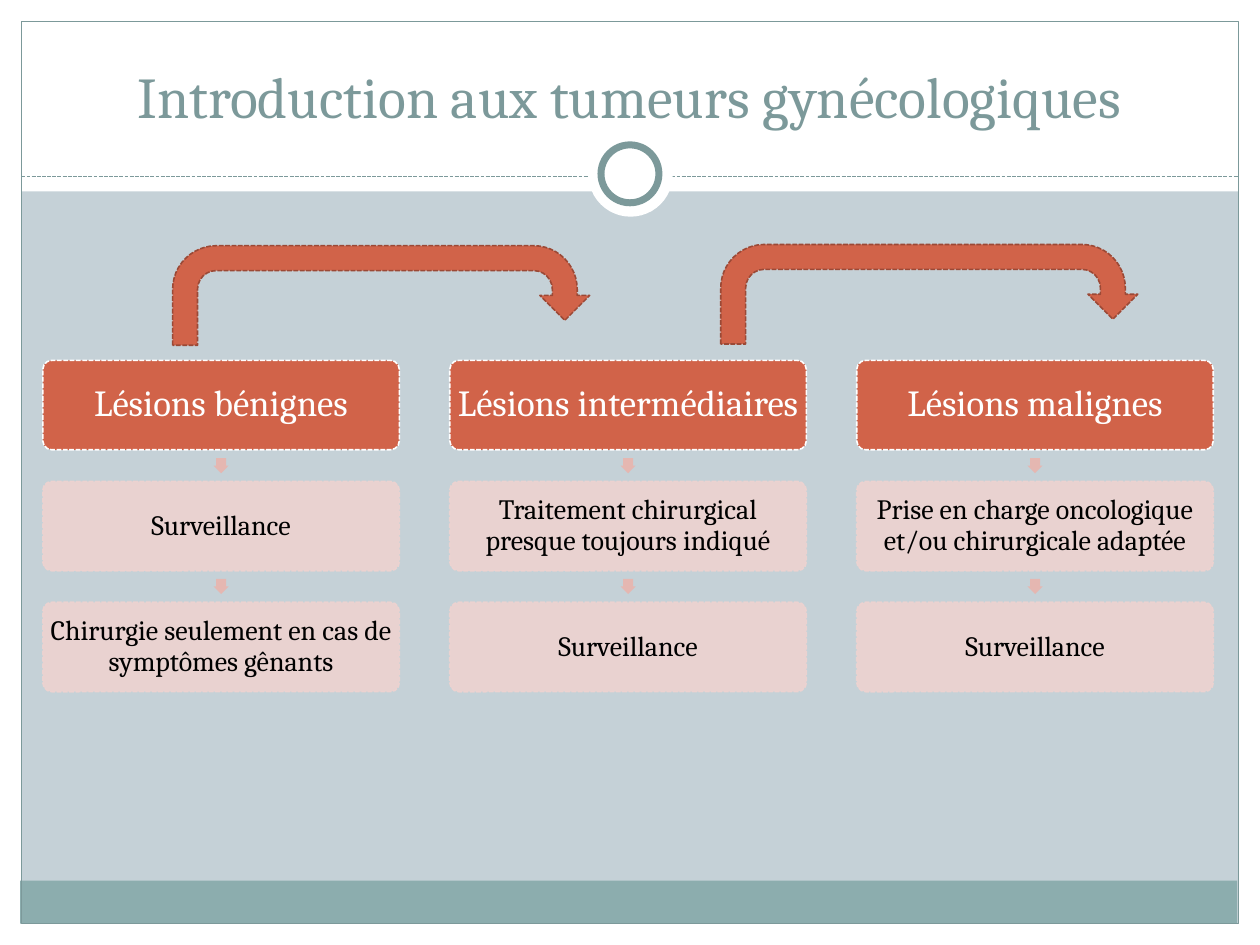
import pptx
import pptx.util
import pptx.dml.color
import pptx.enum.dml
import pptx.enum.shapes
import pptx.enum.text
import pptx.oxml.ns
import lxml.etree

Inches, Pt = pptx.util.Inches, pptx.util.Pt
Kind = pptx.enum.shapes.MSO_SHAPE
Anchor = pptx.enum.text.MSO_ANCHOR
qn = pptx.oxml.ns.qn

COLORS = {
    "back": "C5D1D7", "white": "FFFFFF", "black": "000000",
    "teal": "7C999A", "foot": "8CADAE", "head": "D16349",
    "edge": "9B4936", "step": "EED3D0", "link": "E5B7B1",
}


def color(name):
    return pptx.dml.color.RGBColor.from_string(COLORS[name])


class Deck:
    """Holds the style and the current slide."""
    font = "Cambria"
    dash = pptx.enum.dml.MSO_LINE.SQUARE_DOT

    def __init__(self, slide):
        self.slide = slide
        fill = slide.background.fill
        fill.solid()
        fill.fore_color.rgb = color("back")

    def stroke(self, line, name, width, dashed):
        line.color.rgb = color(name)
        line.width = Pt(width)
        if dashed:
            line.dash_style = self.dash

    def shape(self, kind, box, fill=None, line=None, width=0.9,
              dashed=False, adjust=(), alpha=None):
        item = self.slide.shapes.add_shape(kind, *map(Inches, box))
        item.shadow.inherit = False
        for spot, value in enumerate(adjust):
            item.adjustments[spot] = value
        if fill:
            item.fill.solid()
            item.fill.fore_color.rgb = color(fill)
        else:
            item.fill.background()
        if line:
            self.stroke(item.line, line, width, dashed)
        else:
            item.line.fill.background()
        if alpha:
            for tint in item.element.spPr.iter(qn("a:srgbClr")):
                lxml.etree.SubElement(tint, qn("a:alpha"), val=str(alpha * 1000))
        return item

    def rule(self, left, right, top, name):
        link = self.slide.shapes.add_connector(
            pptx.enum.shapes.MSO_CONNECTOR.STRAIGHT,
            *map(Inches, (left, top, right, top)))
        self.stroke(link.line, name, 0.75, True)
        lxml.etree.SubElement(link.element.spPr, qn("a:effectLst"))

    def label(self, item, text, size, name, inset, anchor=Anchor.MIDDLE, space=0.9):
        frame = item.text_frame
        sides = ("left", "right", "top", "bottom")
        form = {f"margin_{side}": Inches(inset) for side in sides}
        form.update(word_wrap=True, vertical_anchor=anchor)
        for key, value in form.items():
            setattr(frame, key, value)
        par = frame.paragraphs[0]
        par.text = text
        par.alignment = pptx.enum.text.PP_ALIGN.CENTER
        par.line_spacing = space
        for key, value in {"name": self.font, "size": Pt(size)}.items():
            setattr(par.font, key, value)
        par.font.color.rgb = color(name)

    def title(self, text, box):
        item = self.slide.shapes.add_textbox(*map(Inches, box))
        self.label(item, text, 33, "teal", 0.05, Anchor.BOTTOM, 1.0)

    def card(self, text, left, top, first):
        look = {"fill": "head", "line": "white"} if first else {
            "fill": "step", "line": "step", "alpha": 90}
        item = self.shape(Kind.ROUNDED_RECTANGLE, (left, top, CARD_W, CARD_H),
                          dashed=True, adjust=(0.1,), **look)
        size, name, inset = (21, "white", 0.03) if first else (16, "black", 0.02)
        self.label(item, text, size, name, inset)

    def link(self, left, top):
        item = self.shape(Kind.RIGHT_ARROW, (left, top, LINK, LINK), "link",
                          adjust=(0.67, 0.5))
        item.rotation = 90


CARD_W, CARD_H, LINK = 2.83, 0.71, 0.12
LEFT, TOP, COL_STEP, ROW_STEP = 0.34, 2.86, 3.23, 0.96
COLUMNS = [
    ("Lésions bénignes", "Surveillance",
     "Chirurgie seulement en cas de symptômes gênants"),
    ("Lésions intermédiaires", "Traitement chirurgical presque toujours indiqué",
     "Surveillance"),
    ("Lésions malignes", "Prise en charge oncologique et/ou chirurgicale adaptée",
     "Surveillance"),
]


def main():
    show = pptx.Presentation()
    show.slide_width, show.slide_height = Inches(10), Inches(7.5)
    deck = Deck(show.slides.add_slide(show.slide_layouts[6]))

    # White margins and title band
    for box in ((0, 7.33, 10, 0.17), (0, 0, 10, 1.52),
                (0, 0, 0.17, 7.5), (9.83, 0, 0.17, 7.5)):
        deck.shape(Kind.RECTANGLE, box, "white")

    # Footer bar, frame and rule
    deck.shape(Kind.RECTANGLE, (0.16, 6.99, 9.66, 0.34), "foot")
    deck.shape(Kind.RECTANGLE, (0.17, 0.17, 9.66, 7.16), line="teal", width=0.75)
    deck.rule(0.17, 9.83, 1.4, "teal")

    # Ring on the rule
    deck.shape(Kind.OVAL, (4.67, 1.05, 0.67, 0.67), "white")
    deck.shape(Kind.OVAL, (4.77, 1.15, 0.46, 0.46), "white", "teal", 4)

    deck.title("Introduction aux tumeurs gynécologiques", (0.33, 0.25, 9.33, 0.83))

    # Columns of cards joined by small arrows
    for col, texts in enumerate(COLUMNS):
        left = LEFT + col * COL_STEP
        for row, text in enumerate(texts):
            top = TOP + row * ROW_STEP
            if row:
                gap = ROW_STEP - CARD_H
                deck.link(left + (CARD_W - LINK) / 2, top - (gap + LINK) / 2)
            deck.card(text, left, top, row == 0)

    # Bent arrows from column to column
    for left, top in ((1.37, 1.95), (5.72, 1.94)):
        deck.shape(Kind.U_TURN_ARROW, (left, top, 3.31, 0.79), "head", "edge",
                   dashed=True)

    show.save("out.pptx")


if __name__ == "__main__":
    main()
